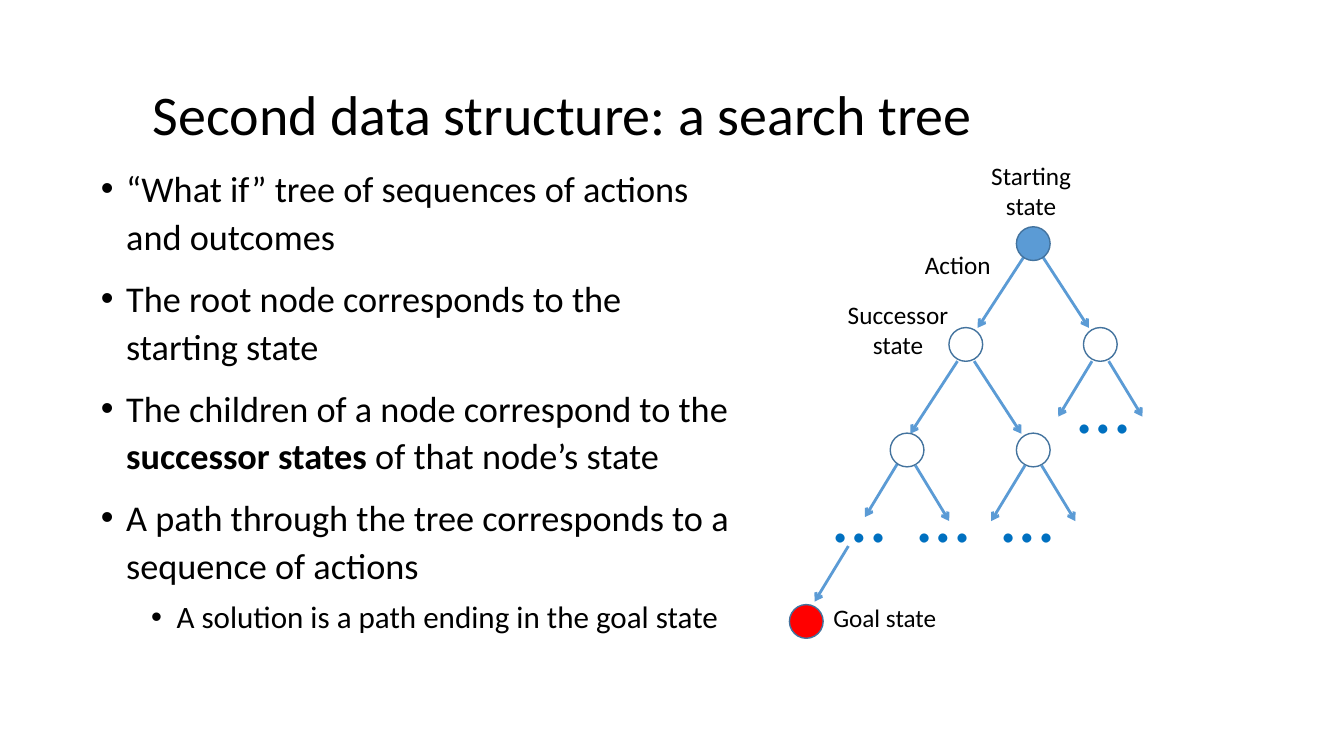
from dataclasses import dataclass

from lxml.etree import SubElement
from pptx import Presentation
from pptx.dml.color import RGBColor
from pptx.enum.shapes import MSO_CONNECTOR as Connector, MSO_SHAPE as ShapeKind
from pptx.enum.text import MSO_ANCHOR as Anchor, MSO_AUTO_SIZE as AutoSize, PP_ALIGN as Align
from pptx.oxml.ns import qn
from pptx.util import Cm, Pt


@dataclass(frozen=True)
class Theme:
    font: str = "Calibri"
    text: str = "000000"
    dots: str = "0070C0"
    arrow: str = "5B9BD5"
    outline: str = "43739E"
    start: str = "5B9BD5"
    goal: str = "FF0000"
    open_node: str = "FFFFFF"
    title_size: float = 40
    body_size: float = 25.9
    detail_size: float = 22.2
    label_size: float = 18
    dots_size: float = 54


@dataclass(frozen=True)
class Bullet:
    phrases: tuple[str, ...]  # every second phrase is bold
    level: int = 0


@dataclass(frozen=True)
class Node:
    x: float  # centre
    y: float
    fill: str


@dataclass(frozen=True)
class Arrow:
    x: float
    y: float
    run: float
    drop: float


@dataclass(frozen=True)
class Label:
    text: str
    left: float
    top: float
    width: float
    height: float
    wrap: bool = False
    size: float = Theme.label_size
    color: str = Theme.text


THEME = Theme()
DIAMETER = 0.85
FOOT = 0.21  # sideways distance of an arrow's start from its node's centre

BULLETS = [
    Bullet(("“What if” tree of sequences of actions and outcomes",)),
    Bullet(("The root node corresponds to the starting state",)),
    Bullet(("The children of a node correspond to the ", "successor states",
            " of that node’s state")),
    Bullet(("A path through the tree corresponds to a sequence of actions",)),
    Bullet(("A solution is a path ending in the goal state",), level=1),
]

# Tree nodes
ROOT = Node(26.04, 6.14, THEME.start)
LEFT = Node(24.34, 8.68, THEME.open_node)
RIGHT = Node(27.73, 8.68, THEME.open_node)
LEFT_LEFT = Node(22.86, 11.34, THEME.open_node)
LEFT_RIGHT = Node(26.04, 11.34, THEME.open_node)
GOAL = Node(20.32, 15.66, THEME.goal)
NODES = [ROOT, LEFT, RIGHT, LEFT_LEFT, LEFT_RIGHT, GOAL]


def branch(node: Node, side: int, depth: float, long: bool = False) -> Arrow:
    """Arrow leaving a node to the left (-1) or right (1), depth below its centre."""
    run, drop = (1.19, 1.83) if long else (0.85, 1.4)
    return Arrow(node.x + side * FOOT, node.y + depth, side * run, drop)


ARROWS = [
    *(branch(ROOT, side, 0.29, long=True) for side in (-1, 1)),
    *(branch(LEFT, side, 0.42, long=True) for side in (-1, 1)),
    *(branch(RIGHT, side, 0.42) for side in (-1, 1)),
    branch(LEFT_LEFT, -1, 0.29),
    branch(LEFT_LEFT, 1, 0.39),
    *(branch(LEFT_RIGHT, side, 0.39) for side in (-1, 1)),
    Arrow(21.38, 13.76, -0.85, 1.4),
]

DOTS = [
    Label("…", left, top, 1.88, 2.57, size=THEME.dots_size, color=THEME.dots)
    for left, top in [(20.75, 11.63), (22.87, 11.63), (24.99, 11.63), (26.9, 8.89)]
]
LABELS = [
    Label("Starting state", 24.46, 3.91, 3.05, 1.8, wrap=True),
    Label("Successor state", 20.93, 7.42, 3.4, 1.8, wrap=True),
    Label("Action", 23.06, 6.15, 2.26, 1.02),
    Label("Goal state", 20.75, 15.06, 3.12, 1.02),
]


def add_run(paragraph, text: str, size: float, color: str, bold: bool = False) -> None:
    run = paragraph.add_run()
    run.text = text
    run.font.name = THEME.font
    run.font.size = Pt(size)
    run.font.bold = bold
    run.font.color.rgb = RGBColor.from_string(color)


def set_indent(paragraph, margin: float, first: float) -> None:
    properties = paragraph._p.get_or_add_pPr()
    properties.set("marL", str(Cm(margin)))
    properties.set("indent", str(Cm(first)))


def add_title(slide, text: str) -> None:
    title = slide.shapes.title
    title.left, title.top, title.width, title.height = Cm(2.33), Cm(1.01), Cm(29.21), Cm(3.68)
    frame = title.text_frame
    frame.auto_size = AutoSize.NONE
    frame.vertical_anchor = Anchor.MIDDLE
    paragraph = frame.paragraphs[0]
    paragraph.alignment = Align.LEFT
    set_indent(paragraph, 1.27, 0)
    add_run(paragraph, text, THEME.title_size, THEME.text)


def add_bullets(slide, bullets: list[Bullet]) -> None:
    frame = slide.shapes.add_textbox(Cm(2.29), Cm(3.96), Cm(16.51), Cm(12.98)).text_frame
    frame.word_wrap = True
    for index, bullet in enumerate(bullets):
        paragraph = frame.add_paragraph() if index else frame.paragraphs[0]
        paragraph.level = bullet.level
        paragraph.line_spacing = 1.1
        paragraph.space_before = Pt(5 if bullet.level else 10)
        set_indent(paragraph, 0.64 + 1.27 * bullet.level, -0.64)
        properties = paragraph._p.get_or_add_pPr()
        SubElement(properties, qn("a:buFont")).set("typeface", "Arial")
        SubElement(properties, qn("a:buChar")).set("char", "•")
        size = THEME.detail_size if bullet.level else THEME.body_size
        for position, phrase in enumerate(bullet.phrases):
            add_run(paragraph, phrase, size, THEME.text, bold=position % 2 == 1)


def add_label(slide, label: Label) -> None:
    box = slide.shapes.add_textbox(
        Cm(label.left), Cm(label.top), Cm(label.width), Cm(label.height))
    frame = box.text_frame
    frame.word_wrap = label.wrap
    frame.auto_size = AutoSize.SHAPE_TO_FIT_TEXT
    paragraph = frame.paragraphs[0]
    paragraph.alignment = Align.CENTER if label.wrap else Align.LEFT
    add_run(paragraph, label.text, label.size, label.color)


def add_arrow(slide, arrow: Arrow) -> None:
    connector = slide.shapes.add_connector(
        Connector.STRAIGHT, Cm(arrow.x), Cm(arrow.y),
        Cm(arrow.x + arrow.run), Cm(arrow.y + arrow.drop))
    connector.line.color.rgb = RGBColor.from_string(THEME.arrow)
    connector.line.width = Pt(2)
    properties = connector._element.spPr
    SubElement(properties.find(qn("a:ln")), qn("a:tailEnd")).set("type", "arrow")
    SubElement(properties, qn("a:effectLst"))


def add_node(slide, node: Node) -> None:
    shape = slide.shapes.add_shape(
        ShapeKind.OVAL, Cm(node.x - DIAMETER / 2), Cm(node.y - DIAMETER / 2),
        Cm(DIAMETER), Cm(DIAMETER))
    shape.shadow.inherit = False
    shape.fill.solid()
    shape.fill.fore_color.rgb = RGBColor.from_string(node.fill)
    shape.line.color.rgb = RGBColor.from_string(THEME.outline)
    shape.line.width = Pt(1)


def main() -> None:
    presentation = Presentation()
    presentation.slide_width, presentation.slide_height = Cm(33.87), Cm(19.05)
    slide = presentation.slides.add_slide(presentation.slide_layouts[5])

    # Title and explanation
    add_title(slide, "Second data structure: a search tree")
    add_bullets(slide, BULLETS)

    # Search tree
    for arrow in ARROWS:
        add_arrow(slide, arrow)
    for node in NODES:
        add_node(slide, node)
    for label in DOTS + LABELS:
        add_label(slide, label)

    presentation.save("out.pptx")


if __name__ == "__main__":
    main()
